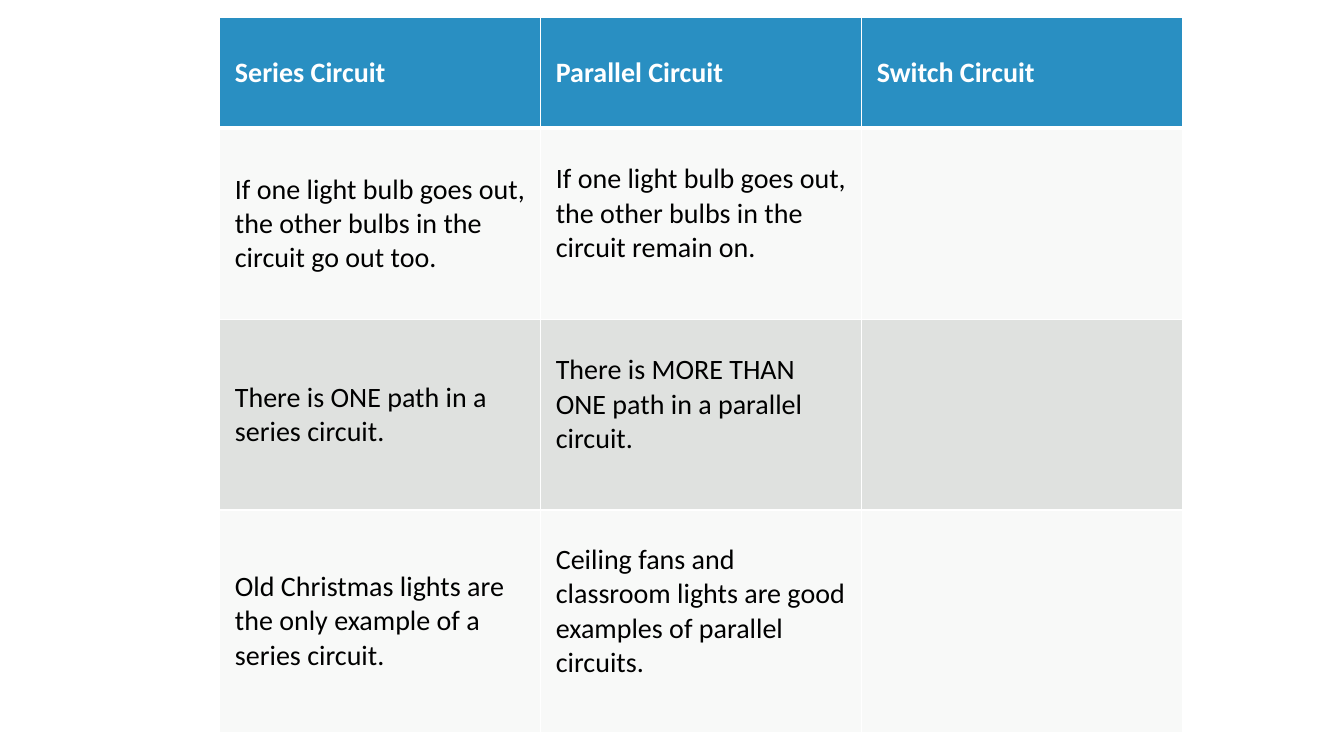
from lxml import etree
from pptx import Presentation
from pptx.dml.color import RGBColor
from pptx.enum.text import MSO_ANCHOR
from pptx.oxml.ns import qn
from pptx.util import Inches, Pt

WHITE = RGBColor(0xFF, 0xFF, 0xFF)
BLACK = RGBColor(0, 0, 0)
HEADER_BLUE = RGBColor(0x29, 0x8F, 0xC2)
BAND_GREY = RGBColor(0xDF, 0xE1, 0xDF)

PADDING = 0.15
PARALLEL_COLUMN = 1
PARALLEL_LIFT = 0.2  # extra room below the text of the middle column
ROW_HEIGHTS = [1.1, 1.9, 1.89, 2.21]
CIRCUITS = [
    ["Series Circuit", "Parallel Circuit", "Switch Circuit"],
    ["If one light bulb goes out, the other bulbs in the circuit go out too.",
     "If one light bulb goes out, the other bulbs in the circuit remain on.", ""],
    ["There is ONE path in a series circuit.",
     "There is MORE THAN ONE path in a parallel circuit.", ""],
    ["Old Christmas lights are the only example of a series circuit.",
     "Ceiling fans and classroom lights are good examples of parallel circuits.", ""],
]


def fill_cell(cell, color, opacity=100):
    cell.fill.solid()
    cell.fill.fore_color.rgb = color
    if opacity < 100:
        tint = cell._tc.tcPr.find(".//" + qn("a:srgbClr"))
        etree.SubElement(tint, qn("a:alpha"), val=str(opacity * 1000))


def border_cell(cell, widths):
    """Draw white borders; widths are left, right, top, bottom in points."""
    for position, (side, width) in enumerate(zip("LRTB", widths)):
        line = etree.Element(qn(f"a:ln{side}"), w=str(Pt(width)))
        solid = etree.SubElement(line, qn("a:solidFill"))
        etree.SubElement(solid, qn("a:srgbClr"), val=str(WHITE))
        cell._tc.tcPr.insert(position, line)


def write_cell(cell, wording, is_header, lift):
    cell.vertical_anchor = MSO_ANCHOR.MIDDLE
    cell.margin_left = cell.margin_right = cell.margin_top = Inches(PADDING)
    cell.margin_bottom = Inches(PADDING + lift)
    cell.text = wording
    font = cell.text_frame.paragraphs[0].font
    font.name, font.size, font.bold = "Calibri", Pt(20), is_header
    font.color.rgb = WHITE if is_header else BLACK


def add_circuit_table(slide, left, top, width):
    columns = len(CIRCUITS[0])
    table = slide.shapes.add_table(
        len(CIRCUITS), columns, Inches(left), Inches(top),
        Inches(width), Inches(sum(ROW_HEIGHTS))).table
    for row, height in zip(table.rows, ROW_HEIGHTS):
        row.height = Inches(height)

    for r, wordings in enumerate(CIRCUITS):
        is_header = r == 0
        for c, wording in enumerate(wordings):
            cell = table.cell(r, c)
            lifted = c == PARALLEL_COLUMN and not is_header
            write_cell(cell, wording, is_header, PARALLEL_LIFT if lifted else 0)
            # Blue header, then alternating pale and full grey bands
            if is_header:
                fill_cell(cell, HEADER_BLUE)
            else:
                fill_cell(cell, BAND_GREY, 20 if r % 2 else 100)
            # A thick rule separates the header from the body
            border_cell(cell, (1, 1, 3 if r == 1 else 1, 3 if is_header else 1))


def main():
    deck = Presentation()
    deck.slide_width, deck.slide_height = Inches(13.33), Inches(7.5)
    blank_layout = deck.slide_layouts[6]
    slide = deck.slides.add_slide(blank_layout)
    add_circuit_table(slide, left=2.18, top=0.17, width=9.55)
    deck.save("out.pptx")


if __name__ == "__main__":
    main()
